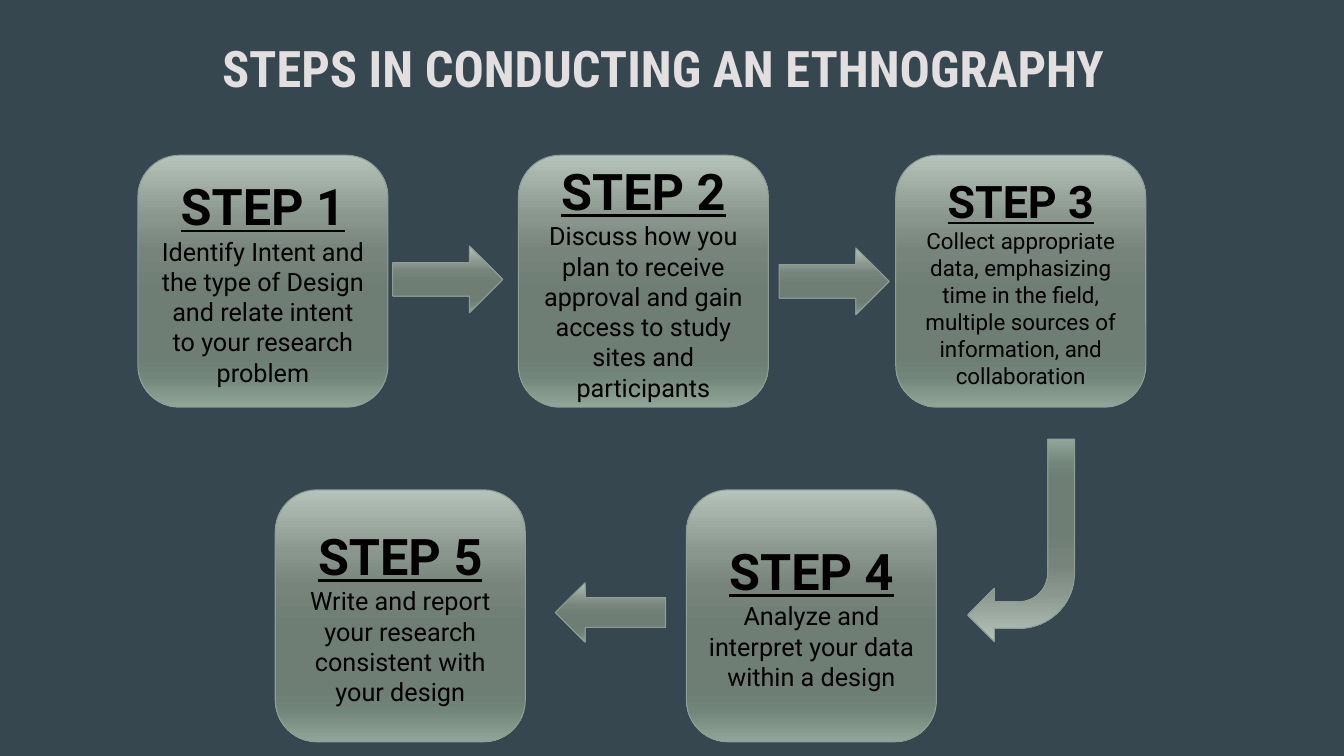
import pptx
import pptx.util
import pptx.dml.color
import pptx.enum.shapes
import pptx.enum.text
import pptx.oxml.ns
from lxml import etree

Pt = pptx.util.Pt
MSO = pptx.enum.shapes.MSO_SHAPE
qn = pptx.oxml.ns.qn
COLORS = {"background": "37474F", "line": "8E9E94", "title": "E1DFDF", "text": "000000"}
GRADIENT = {0: "B5C3BA", 25: "89968E", 38: "76847C", 55: "6F7E75",
            80: "6D7E74", 88: "73867B", 100: "91A698"}


def add_text(p, text, size, font="Roboto", color="text", bold=False, underline=False):
    p.alignment = pptx.enum.text.PP_ALIGN.CENTER
    r = p.add_run()
    r.text = text
    r.font.name, r.font.size = font, Pt(size)
    r.font.bold, r.font.underline = bold, underline
    r.font.color.rgb = pptx.dml.color.RGBColor.from_string(COLORS[color])


def add_gradient_shape(kind, x, y, w, h, adjustments):
    sp = s.shapes.add_shape(kind, Pt(x), Pt(y), Pt(w), Pt(h))
    sp.shadow.inherit = False
    for i, value in enumerate(adjustments):
        sp.adjustments[i] = value
    sp.line.color.rgb = pptx.dml.color.RGBColor.from_string(COLORS["line"])
    sp.line.width = Pt(0.75)
    sp.fill.gradient()
    sp.fill.gradient_angle = 270
    # Replace the default stops with the seven-stop gradient
    stops = next(sp.element.iter(qn("a:gsLst")))
    for gs in list(stops):
        stops.remove(gs)
    for position, color in GRADIENT.items():
        gs = etree.SubElement(stops, qn("a:gs"), pos=str(position * 1000))
        etree.SubElement(gs, qn("a:srgbClr"), val=color)
    return sp


prs = pptx.Presentation()
prs.slide_width, prs.slide_height = Pt(960), Pt(540)
s = prs.slides.add_slide(prs.slide_layouts[6])
s.background.fill.solid()
s.background.fill.fore_color.rgb = pptx.dml.color.RGBColor.from_string(COLORS["background"])

# Step boxes: left, top, heading size, body size, heading, body
TOP_ROW, BOTTOM_ROW = 110.9, 349.9
steps = [
    (98.5, TOP_ROW, 36, 18, "STEP 1",
     "Identify Intent and the type of Design and relate intent to your research problem"),
    (370.3, TOP_ROW, 36, 18, "STEP 2",
     "Discuss how you plan to receive approval and gain access to study sites and participants"),
    (639.8, TOP_ROW, 32, 16, "STEP 3",
     "Collect appropriate data, emphasizing time in the field, multiple sources of "
     "information, and collaboration"),
    (196.6, BOTTOM_ROW, 36, 18, "STEP 5",
     "Write and report your research consistent with your design"),
    (490.3, BOTTOM_ROW, 36, 18, "STEP 4",
     "Analyze and interpret your data within a design"),
]
for x, y, heading_size, body_size, heading, body in steps:
    sp = add_gradient_shape(MSO.ROUNDED_RECTANGLE, x, y, 178.6, 180, [0.167])
    tf = sp.text_frame
    tf.word_wrap = True
    tf.vertical_anchor = pptx.enum.text.MSO_ANCHOR.MIDDLE
    add_text(tf.paragraphs[0], heading, heading_size, bold=True, underline=True)
    add_text(tf.add_paragraph(), body, body_size)

# Arrows between the steps
add_gradient_shape(MSO.RIGHT_ARROW, 280.5, 175.7, 78.7, 47.7, [0.5, 0.5])
add_gradient_shape(MSO.RIGHT_ARROW, 556.5, 177.1, 78.7, 47.7, [0.5, 0.5])
add_gradient_shape(MSO.LEFT_ARROW, 396.7, 416.2, 78.7, 42.5, [0.5, 0.5])
bent = add_gradient_shape(MSO.BENT_ARROW, 691.2, 313.7, 76.3, 144.7, [0.25, 0.25, 0.25, 0.519])
bent.rotation = 180

# Title
tb = s.shapes.add_textbox(Pt(150.5), Pt(23), Pt(646.6), Pt(85))
tb.text_frame.word_wrap = True
add_text(tb.text_frame.paragraphs[0], "STEPS IN CONDUCTING AN ETHNOGRAPHY ", 36,
         font="Roboto Condensed", color="title", bold=True)

prs.save("out.pptx")
